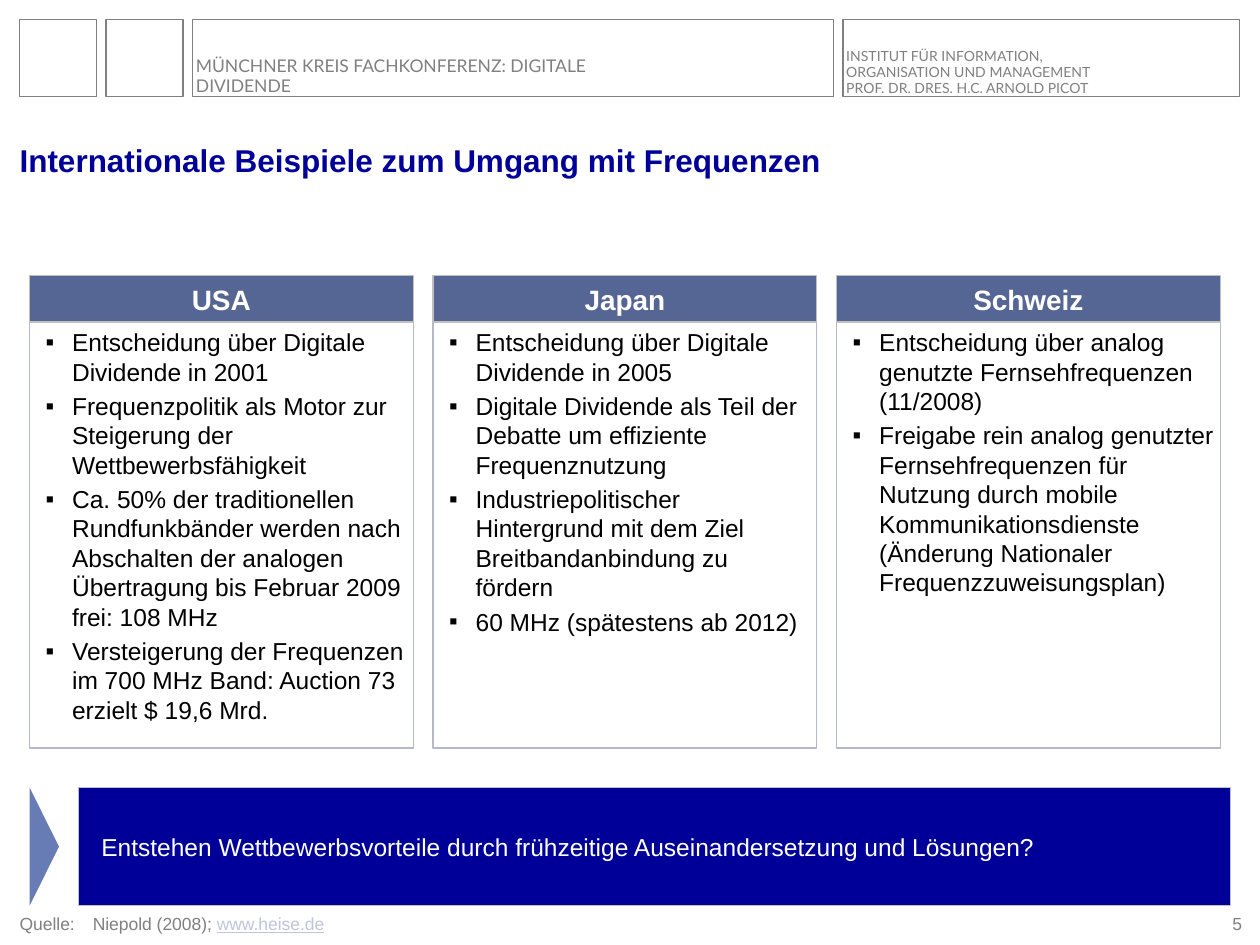
from dataclasses import dataclass

from lxml.etree import SubElement
from pptx import Presentation
from pptx.dml.color import RGBColor
from pptx.enum.shapes import MSO_SHAPE as Shape
from pptx.enum.text import MSO_ANCHOR as Anchor, MSO_AUTO_SIZE as AutoSize, PP_ALIGN as Align
from pptx.oxml.ns import qn
from pptx.util import Pt

NAVY, GREY, SILVER, WHITE, BLACK = "000099", "808080", "C0C0C0", "FFFFFF", "000000"
COLUMN_LEFT, COLUMN_STEP, COLUMN_WIDTH = 16.8, 230.6, 219.4
HEAD_TOP, HEAD_HEIGHT, LIST_HEIGHT = 157.6, 26.5, 243.4


@dataclass
class Frame:
    left: float
    width: float


@dataclass
class Column:
    head: str
    items: list[str]


FRAMES = [Frame(11.2, 44), Frame(60.6, 44), Frame(110, 366.4), Frame(481.8, 226.6)]

COLUMNS = [
    Column("USA", [
        "Entscheidung über Digitale Dividende in 2001",
        "Frequenzpolitik als Motor zur Steigerung der Wettbewerbsfähigkeit",
        "Ca. 50% der traditionellen Rundfunkbänder werden nach Abschalten der analogen "
        "Übertragung bis Februar 2009 frei: 108 MHz",
        "Versteigerung der Frequenzen im 700 MHz Band: Auction 73 erzielt $ 19,6 Mrd.",
    ]),
    Column("Japan", [
        "Entscheidung über Digitale Dividende in 2005",
        "Digitale Dividende als Teil der Debatte um effiziente Frequenznutzung",
        "Industriepolitischer Hintergrund mit dem Ziel Breitbandanbindung zu fördern",
        "60 MHz (spätestens ab 2012)",
    ]),
    Column("Schweiz", [
        "Entscheidung über analog genutzte Fernsehfrequenzen (11/2008)",
        "Freigabe rein analog genutzter Fernsehfrequenzen für Nutzung durch mobile "
        "Kommunikationsdienste (Änderung Nationaler Frequenzzuweisungsplan)",
    ]),
]


def rgb(color: str) -> RGBColor:
    return RGBColor.from_string(color)


def place(sp, left: float, top: float, width: float, height: float) -> None:
    sp.left, sp.top, sp.width, sp.height = Pt(left), Pt(top), Pt(width), Pt(height)


def add_box(s, left: float, top: float, width: float, height: float,
            kind=Shape.RECTANGLE, fill: str | None = None, line: str | None = None):
    sp = s.shapes.add_shape(kind, Pt(left), Pt(top), Pt(width), Pt(height))
    sp.shadow.inherit = False
    if fill:
        sp.fill.solid()
        sp.fill.fore_color.rgb = rgb(fill)
    else:
        sp.fill.background()
    if line:
        sp.line.color.rgb = rgb(line)
        sp.line.width = Pt(0.75)
    else:
        sp.line.fill.background()
    return sp


def set_indent(p, left: float, hanging: float, bullet: str | None = None) -> None:
    pPr = p._p.get_or_add_pPr()
    pPr.set("marL", str(Pt(left)))
    pPr.set("indent", str(Pt(-hanging)))
    if bullet:
        color = SubElement(pPr, qn("a:buClr"))
        SubElement(color, qn("a:srgbClr"), val=BLACK)
        SubElement(pPr, qn("a:buFont"), typeface="Arial")
        SubElement(pPr, qn("a:buChar"), char=bullet)


def format_run(r, size: float, color: str, font: str = "Arial",
               bold: bool = False, underline: bool = False) -> None:
    r.font.size, r.font.name, r.font.bold = Pt(size), font, bold
    r.font.color.rgb = rgb(color)
    if underline:
        r.font.underline = True


def write(sp, texts: list[str], size: float, color: str, font: str = "Arial",
          bold: bool = False, align=Align.LEFT, anchor=Anchor.BOTTOM, inset: float = 0,
          wrap: bool = True, spacing: float | None = None, after: float = 0,
          indent: tuple[float, float] | None = None, bullet: str | None = None):
    tf = sp.text_frame
    tf.auto_size, tf.word_wrap, tf.vertical_anchor = AutoSize.NONE, wrap, anchor
    tf.margin_left = tf.margin_top = tf.margin_right = tf.margin_bottom = Pt(inset)
    for i, text in enumerate(texts):
        p = tf.add_paragraph() if i else tf.paragraphs[0]
        p.text = text
        p.alignment, p.space_before, p.space_after = align, Pt(0), Pt(after)
        if spacing:
            p.line_spacing = spacing
        if indent:
            set_indent(p, *indent, bullet)
        for br in p._p.findall(qn("a:br")):
            SubElement(br, qn("a:rPr"), sz=str(int(size * 100)))
        for r in p.runs:
            format_run(r, size, color, font, bold)
    return tf


def add_label(s, left: float, top: float, width: float, height: float,
              texts: list[str], size: float, color: str = GREY, **style):
    sp = s.shapes.add_textbox(Pt(left), Pt(top), Pt(width), Pt(height))
    return write(sp, texts, size, color, **style)


def add_column(s, left: float, column: Column) -> None:
    body = add_box(s, left, HEAD_TOP + HEAD_HEIGHT, COLUMN_WIDTH, LIST_HEIGHT,
                   fill=WHITE, line="B4B8C8")
    write(body, column.items, 14, BLACK, anchor=Anchor.TOP, inset=2.8, after=2.8,
          indent=(21.6, 15.1), bullet="▪")
    head = add_box(s, left, HEAD_TOP, COLUMN_WIDTH, HEAD_HEIGHT, fill="556594", line=SILVER)
    write(head, [column.head], 16, WHITE, bold=True, align=Align.CENTER,
          anchor=Anchor.MIDDLE, inset=2.8, wrap=False)


def main() -> None:
    prs = Presentation()
    prs.slide_width, prs.slide_height = Pt(720), Pt(540)
    s = prs.slides.add_slide(prs.slide_layouts[5])

    for frame in FRAMES:
        add_box(s, frame.left, 11.2, frame.width, 44, line=GREY)
    add_label(s, 112, 25.9, 255.6, 29.5, ["MÜNCHNER KREIS FACHKONFERENZ: DIGITALE DIVIDENDE"],
              10, font="Lato", spacing=0.95)
    add_label(s, 483.6, 22.3, 187.2, 33.1,
              ["INSTITUT FÜR INFORMATION,\vORGANISATION UND MANAGEMENT",
               "PROF. DR. DRES. H.C. ARNOLD PICOT"],
              8, font="Lato", spacing=0.95)

    title = s.shapes.title
    place(title, 11.2, 60.5, 697.6, 41.7)
    write(title, ["Internationale Beispiele zum Umgang mit Frequenzen"], 18, NAVY, bold=True)

    for i, column in enumerate(COLUMNS):
        add_column(s, COLUMN_LEFT + i * COLUMN_STEP, column)

    add_box(s, -8.5, 475.4, 67.6, 16.8, Shape.ISOSCELES_TRIANGLE, fill="677BB4").rotation = 90
    banner = add_box(s, 45, 450, 658, 67.6, fill=NAVY, line=SILVER)
    write(banner,
          ["Entstehen Wettbewerbsvorteile durch frühzeitige Auseinandersetzung und Lösungen?"],
          14, WHITE, anchor=Anchor.MIDDLE, inset=5.7, indent=(20.9, 13.7))

    tf = add_label(s, 11.2, 521.3, 632.2, 12.2, ["Quelle:\tNiepold (2008); "], 10,
                   indent=(41.8, 41.8))
    r = tf.paragraphs[0].add_run()
    r.text = "www.heise.de"
    format_run(r, 10, "BFC6DB", underline=True)
    add_label(s, 689.8, 521.3, 20, 12.2, ["5"], 10, align=Align.RIGHT)

    prs.save("out.pptx")


if __name__ == "__main__":
    main()
